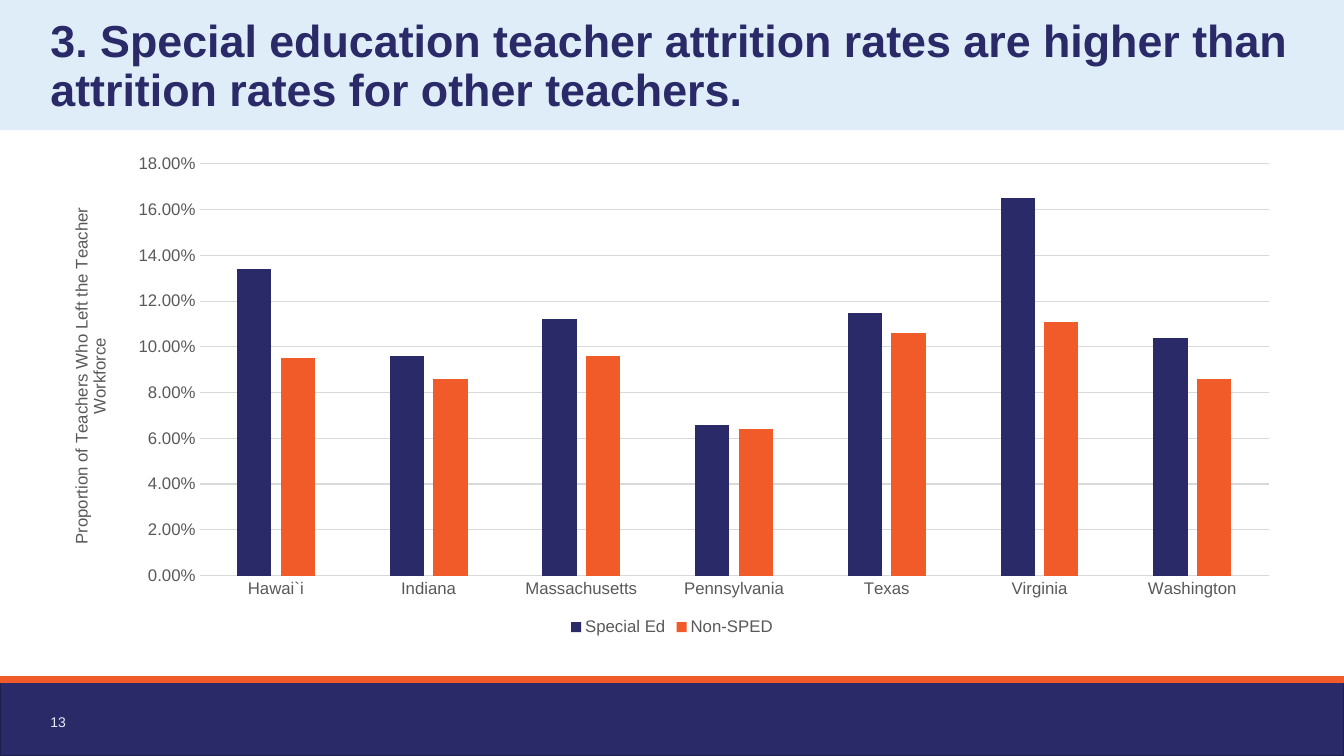
from lxml import etree
from pptx import Presentation
from pptx.chart.data import CategoryChartData
from pptx.dml.color import RGBColor
from pptx.enum import chart as charts, shapes, text
from pptx.oxml import parse_xml
from pptx.oxml.ns import nsdecls, qn
from pptx.util import Cm, Pt

TITLE = "3. Special education teacher attrition rates are higher than attrition rates for other teachers."
AXIS_TITLE = "Proportion of Teachers Who Left the Teacher Workforce"
SLIDE_NUMBER = "13"
STATES = ["Hawai`i", "Indiana", "Massachusetts", "Pennsylvania", "Texas", "Virginia", "Washington"]
SERIES = [
    ("Special Ed", "navy", (0.134, 0.096, 0.112, 0.066, 0.115, 0.165, 0.104)),
    ("Non-SPED", "orange", (0.095, 0.086, 0.096, 0.064, 0.106, 0.111, 0.086)),
]
COLORS = {
    "navy": "292A67", "navy edge": "1E1F4C", "orange": "F15A29",
    "pale blue": "DFEDF9", "gray": "595959", "grid": "D9D9D9",
}
PLOT_AREA = {"x": 0.12, "y": 0.04, "w": 0.86, "h": 0.83}

WIDTH, HEIGHT = Cm(33.87), Cm(19.05)
MARGIN = Cm(1.27)
CONTENT_WIDTH = WIDTH - 2 * MARGIN
FOOTER_TOP = Cm(17.12)


def color(name):
    return RGBColor.from_string(COLORS[name])


def set_attributes(target, values):
    for name, value in values.items():
        setattr(target, name, value)


def format_font(font, size, color_name, bold=False):
    set_attributes(font, {"name": "Arial", "size": Pt(size), "bold": bold})
    font.color.rgb = color(color_name)


def format_line(line, color_name, width):
    line.color.rgb = color(color_name)
    line.width = Pt(width)


def add_band(slide, top, height, fill):
    band = slide.shapes.add_shape(shapes.MSO_SHAPE.RECTANGLE, 0, top, WIDTH, height)
    band.shadow.inherit = False
    band.fill.solid()
    band.fill.fore_color.rgb = color(fill)
    band.line.fill.background()
    return band


def add_background(slide):
    footer = add_band(slide, FOOTER_TOP, HEIGHT - FOOTER_TOP, "navy")
    format_line(footer.line, "navy edge", 1)
    add_band(slide, 0, Cm(3.28), "pale blue")
    rule = slide.shapes.add_connector(
        shapes.MSO_CONNECTOR.STRAIGHT, 0, FOOTER_TOP, WIDTH, FOOTER_TOP)
    format_line(rule.line, "orange", 4.5)
    etree.SubElement(rule.element.spPr, qn("a:effectLst"))


def add_title(slide):
    title = slide.shapes.title
    slide.shapes.element.append(title.element)  # in front of the bands
    set_attributes(title, {"left": MARGIN, "top": Cm(0.25), "width": CONTENT_WIDTH, "height": Cm(2.67)})
    frame = title.text_frame
    set_attributes(frame, {
        "text": TITLE, "word_wrap": True, "auto_size": text.MSO_AUTO_SIZE.NONE,
        "vertical_anchor": text.MSO_ANCHOR.BOTTOM,
        "margin_left": 0, "margin_right": 0, "margin_top": 0, "margin_bottom": 0,
    })
    paragraph = frame.paragraphs[0]
    set_attributes(paragraph, {"alignment": text.PP_ALIGN.LEFT, "line_spacing": 0.9})
    format_font(paragraph.font, 32, "navy", bold=True)


def set_plot_area(chart):
    sizes = "".join(f'<c:{key} val="{value}"/>' for key, value in PLOT_AREA.items())
    layout = parse_xml(
        f'<c:layout {nsdecls("c")}><c:manualLayout><c:layoutTarget val="inner"/>'
        f'<c:xMode val="edge"/><c:yMode val="edge"/>{sizes}</c:manualLayout></c:layout>')
    plot_area = chart.element.chart.plotArea
    for old_layout in plot_area.findall(qn("c:layout")):
        plot_area.remove(old_layout)
    plot_area.insert(0, layout)


def add_attrition_chart(slide):
    data = CategoryChartData(number_format="0.00%")
    data.categories = STATES
    for name, _, values in SERIES:
        data.add_series(name, values)
    chart = slide.shapes.add_chart(
        charts.XL_CHART_TYPE.COLUMN_CLUSTERED, MARGIN, Cm(3.63), CONTENT_WIDTH, Cm(12.5), data).chart
    format_font(chart.font, 12, "gray")
    set_attributes(chart, {"has_title": False, "has_legend": True})
    set_attributes(chart.legend, {
        "position": charts.XL_LEGEND_POSITION.BOTTOM, "include_in_layout": False})
    format_font(chart.legend.font, 12, "gray")

    plot = chart.plots[0]
    set_attributes(plot, {"gap_width": 219, "overlap": -27, "vary_by_categories": False})
    for series, (_, fill, _) in zip(plot.series, SERIES):
        series.format.fill.solid()
        series.format.fill.fore_color.rgb = color(fill)

    for axis in (chart.category_axis, chart.value_axis):
        axis.major_tick_mark = axis.minor_tick_mark = charts.XL_TICK_MARK.NONE
        format_font(axis.tick_labels.font, 12, "gray")
    format_line(chart.category_axis.format.line, "grid", 0.75)

    value_axis = chart.value_axis
    set_attributes(value_axis, {"minimum_scale": 0, "maximum_scale": 0.18, "major_unit": 0.02})
    set_attributes(value_axis.tick_labels, {"number_format": "0.00%", "number_format_is_linked": False})
    value_axis.format.line.fill.background()
    format_line(value_axis.major_gridlines.format.line, "grid", 0.75)
    axis_title = value_axis.axis_title.text_frame
    axis_title.text = AXIS_TITLE
    format_font(axis_title.paragraphs[0].runs[0].font, 12, "gray")
    set_plot_area(chart)


def add_slide_number(slide):
    frame = slide.shapes.add_textbox(MARGIN, Cm(17.83), Cm(0.69), Cm(0.69)).text_frame
    set_attributes(frame, {
        "text": SLIDE_NUMBER, "word_wrap": False, "vertical_anchor": text.MSO_ANCHOR.BOTTOM,
        "margin_left": 0, "margin_right": 0,
    })
    format_font(frame.paragraphs[0].font, 10, "pale blue")


def main():
    presentation = Presentation()
    set_attributes(presentation, {"slide_width": WIDTH, "slide_height": HEIGHT})
    slide = presentation.slides.add_slide(presentation.slide_layouts.get_by_name("Title Only"))
    add_background(slide)
    add_title(slide)
    add_attrition_chart(slide)
    add_slide_number(slide)
    presentation.save("out.pptx")


if __name__ == "__main__":
    main()
